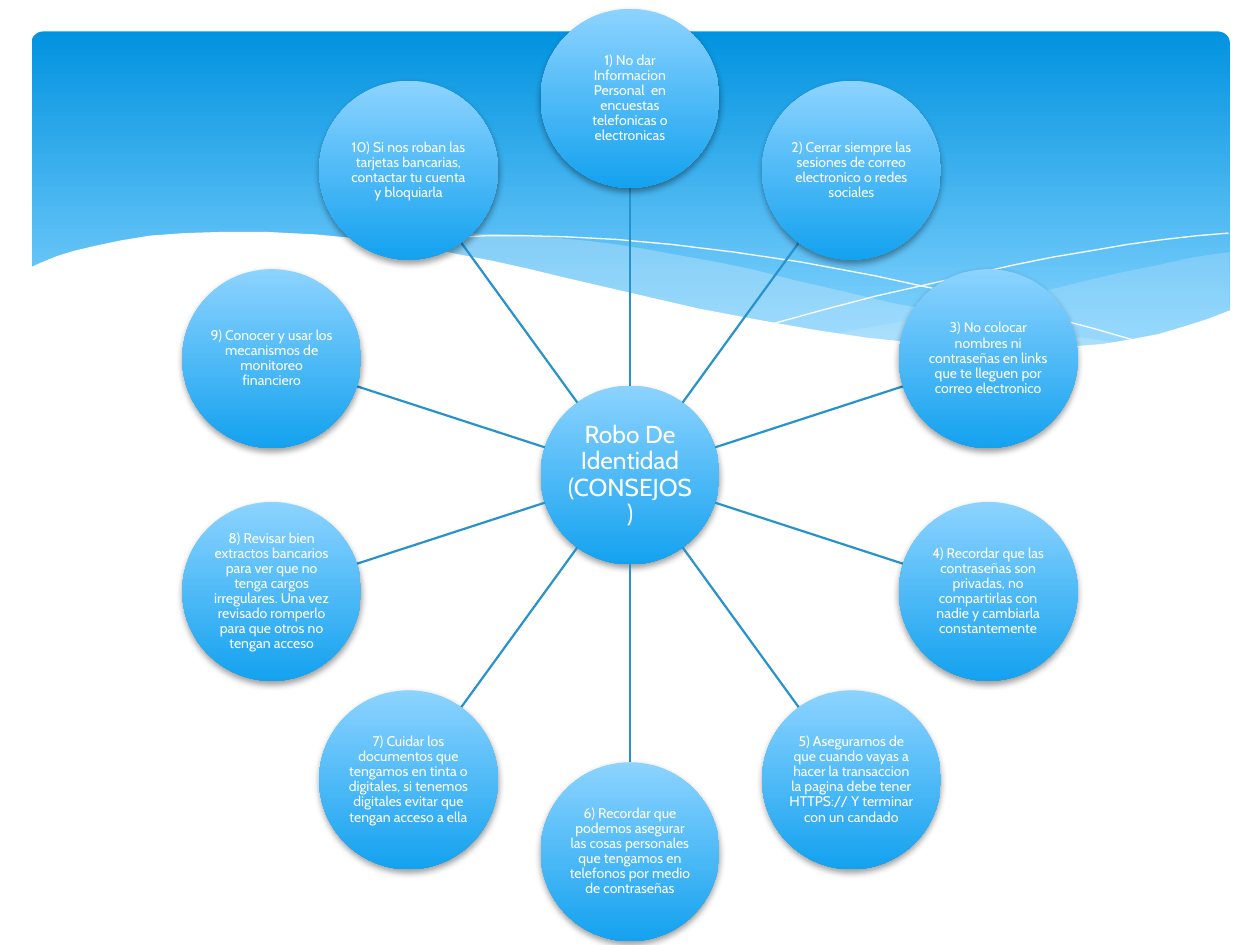
from math import cos, pi, sin

from lxml.etree import SubElement
from pptx import Presentation
from pptx.dml.color import RGBColor
from pptx.enum.shapes import MSO_CONNECTOR, MSO_SHAPE
from pptx.enum.text import MSO_ANCHOR, PP_ALIGN
from pptx.oxml.ns import qn
from pptx.util import Pt

PX = 9144
SLIDE_SIZE = (1000, 750)
FONT = "Cabin"
COLORS = {
    "banner_top": "0293E0",
    "banner_bottom": "83D3FE",
    "wave": "C6E7FC",
    "white": "FFFFFF",
    "circle_top": "8CD3FF",
    "circle_bottom": "14A2EF",
    "spoke": "2792CB",
    "shadow": "000000",
}

TOPIC = "Robo De Identidad (CONSEJOS)"
TIPS = [
    "1) No dar Informacion Personal  en encuestas telefonicas o electronicas",
    "2) Cerrar siempre las sesiones de correo electronico o redes sociales",
    "3) No colocar nombres ni contraseñas en links que te lleguen por correo electronico",
    "4) Recordar que las contraseñas son privadas, no compartirlas con nadie y cambiarla constantemente",
    "5) Asegurarnos de que cuando vayas a hacer la transaccion la pagina debe tener HTTPS:// Y terminar con un candado",
    "6) Recordar que podemos asegurar las cosas personales que tengamos en telefonos por medio de contraseñas",
    "7) Cuidar los documentos que tengamos en tinta o digitales, si tenemos digitales evitar que tengan acceso a ella",
    "8) Revisar bien extractos bancarios para ver que no tenga cargos irregulares. Una vez revisado romperlo para que otros no tengan acceso",
    "9) Conocer y usar los mecanismos de monitoreo financiero",
    "10) Si nos roban las tarjetas bancarias, contactar tu cuenta y bloquiarla",
]

CENTER = (500, 377)
ORBIT = 299
CIRCLE_RADIUS = 71

BANNER = (25, 25, 951, 270)
RIGHT_WAVE = [
    (976, 200), (948, 204), (921, 210), (891, 216), (861, 223), (805, 237), (753, 248),
    (706, 257), (661, 265), (691, 269), (719, 272), (745, 275), (769, 277), (803, 278),
    (835, 277), (863, 275), (889, 272), (913, 267), (935, 262), (949, 257), (963, 252), (976, 247),
]
MIDDLE_WAVE = [
    (893, 273), (866, 269), (837, 265), (807, 260), (775, 254), (741, 247), (706, 240),
    (668, 231), (629, 222), (598, 214), (569, 208), (541, 203), (514, 198), (489, 194),
    (465, 191), (442, 189), (420, 187), (399, 186), (361, 185), (328, 187), (299, 189),
    (286, 191), (323, 196), (362, 203), (404, 211), (449, 222), (491, 232), (530, 240),
    (566, 248), (601, 255), (634, 261), (665, 266), (695, 270), (722, 274), (748, 276),
    (773, 277), (796, 278), (828, 278), (857, 277), (876, 275),
]
FALLING_LINE = [
    (309, 195), (328, 192), (353, 189), (387, 187), (416, 187), (450, 188), (489, 190),
    (533, 194), (582, 200), (636, 208), (695, 219), (727, 226), (760, 233), (795, 241),
    (831, 251), (869, 261), (907, 272),
]
RISING_LINE = [
    (613, 257), (653, 246), (695, 235), (748, 223), (806, 210), (836, 204), (866, 199),
    (895, 194), (924, 190), (951, 187), (975, 185),
]
WHITE_WAVE = [
    (977, 246), (959, 253), (940, 259), (920, 265), (899, 269), (875, 273), (850, 275),
    (823, 277), (793, 276), (761, 275), (726, 272), (688, 268), (648, 262), (603, 254),
    (555, 245), (503, 233), (447, 220), (418, 213), (391, 207), (365, 202), (340, 197),
    (316, 194), (292, 190), (271, 188), (250, 186), (230, 185), (211, 184), (177, 184),
    (146, 185), (119, 187), (95, 191), (76, 195), (59, 199), (46, 203), (36, 207),
    (29, 210), (23, 213), (23, 329), (977, 329),
]


def color(name):
    return RGBColor.from_string(COLORS[name])


def fill_gradient(shape, top, bottom, end=1.0):
    shape.fill.gradient()
    shape.fill.gradient_angle = 270
    for stop, name, position in zip(shape.fill.gradient_stops, (top, bottom), (0, end)):
        stop.color.rgb = color(name)
        stop.position = position


def set_alpha(color_element, percent):
    SubElement(color_element, qn("a:alpha"), val=str(percent * 1000))


def add_banner(slide):
    banner = slide.shapes.add_shape(
        MSO_SHAPE.ROUNDED_RECTANGLE, *(value * PX for value in BANNER))
    banner.adjustments[0] = 0.034
    banner.shadow.inherit = False
    banner.line.fill.background()
    fill_gradient(banner, "banner_top", "banner_bottom", 0.9)


def add_outline(slide, points, close):
    builder = slide.shapes.build_freeform(*points[0], scale=PX)
    builder.add_line_segments(points[1:], close=close)
    shape = builder.convert_to_shape()
    shape.shadow.inherit = False
    return shape


def add_wave(slide, points, name, opacity=100):
    wave = add_outline(slide, points, True)
    wave.line.fill.background()
    wave.fill.solid()
    wave.fill.fore_color.rgb = color(name)
    if opacity < 100:
        set_alpha(wave.element.spPr.find(".//" + qn("a:srgbClr")), opacity)


def add_wave_line(slide, points):
    wave_line = add_outline(slide, points, False)
    wave_line.fill.background()
    wave_line.line.color.rgb = color("white")
    wave_line.line.width = Pt(0)


def add_shadow(shape):
    shape.shadow.inherit = False
    effects = shape.element.spPr.find(qn("a:effectLst"))
    shadow = SubElement(effects, qn("a:outerShdw"), blurRad=str(Pt(4)), dist=str(Pt(2)),
                        dir="5400000", rotWithShape="0")
    set_alpha(SubElement(shadow, qn("a:srgbClr"), val=COLORS["shadow"]), 38)


def point_at(angle, distance):
    return (round((CENTER[0] + distance * cos(angle)) * PX),
            round((CENTER[1] + distance * sin(angle)) * PX))


def add_spoke(slide, angle):
    spoke = slide.shapes.add_connector(
        MSO_CONNECTOR.STRAIGHT,
        *point_at(angle, CIRCLE_RADIUS), *point_at(angle, ORBIT - CIRCLE_RADIUS))
    spoke.line.color.rgb = color("spoke")
    spoke.line.width = Pt(1.25)
    SubElement(spoke.element.spPr, qn("a:effectLst"))


def add_circle(slide, center, text, size):
    radius = CIRCLE_RADIUS * PX
    circle = slide.shapes.add_shape(
        MSO_SHAPE.OVAL, center[0] - radius, center[1] - radius, 2 * radius, 2 * radius)
    circle.line.fill.background()
    fill_gradient(circle, "circle_top", "circle_bottom")
    add_shadow(circle)
    frame = circle.text_frame
    frame.word_wrap = True
    frame.vertical_anchor = MSO_ANCHOR.MIDDLE
    frame.margin_left = frame.margin_right = frame.margin_top = frame.margin_bottom = PX
    paragraph = frame.paragraphs[0]
    paragraph.alignment = PP_ALIGN.CENTER
    paragraph.line_spacing = 0.9
    run = paragraph.add_run()
    run.text = text
    run.font.name = FONT
    run.font.size = Pt(size)
    run.font.color.rgb = color("white")


def main():
    presentation = Presentation()
    presentation.slide_width, presentation.slide_height = (side * PX for side in SLIDE_SIZE)
    slide = presentation.slides.add_slide(presentation.slide_layouts[6])

    add_banner(slide)
    add_wave(slide, RIGHT_WAVE, "wave", 29)
    add_wave(slide, MIDDLE_WAVE, "wave", 40)
    add_wave_line(slide, FALLING_LINE)
    add_wave_line(slide, RISING_LINE)
    add_wave(slide, WHITE_WAVE, "white")

    add_circle(slide, point_at(0, 0), TOPIC, 14)
    for index, tip in enumerate(TIPS):
        angle = 2 * pi * index / len(TIPS) - pi / 2
        add_spoke(slide, angle)
        add_circle(slide, point_at(angle, ORBIT), tip, 8)

    presentation.save("out.pptx")


if __name__ == "__main__":
    main()
